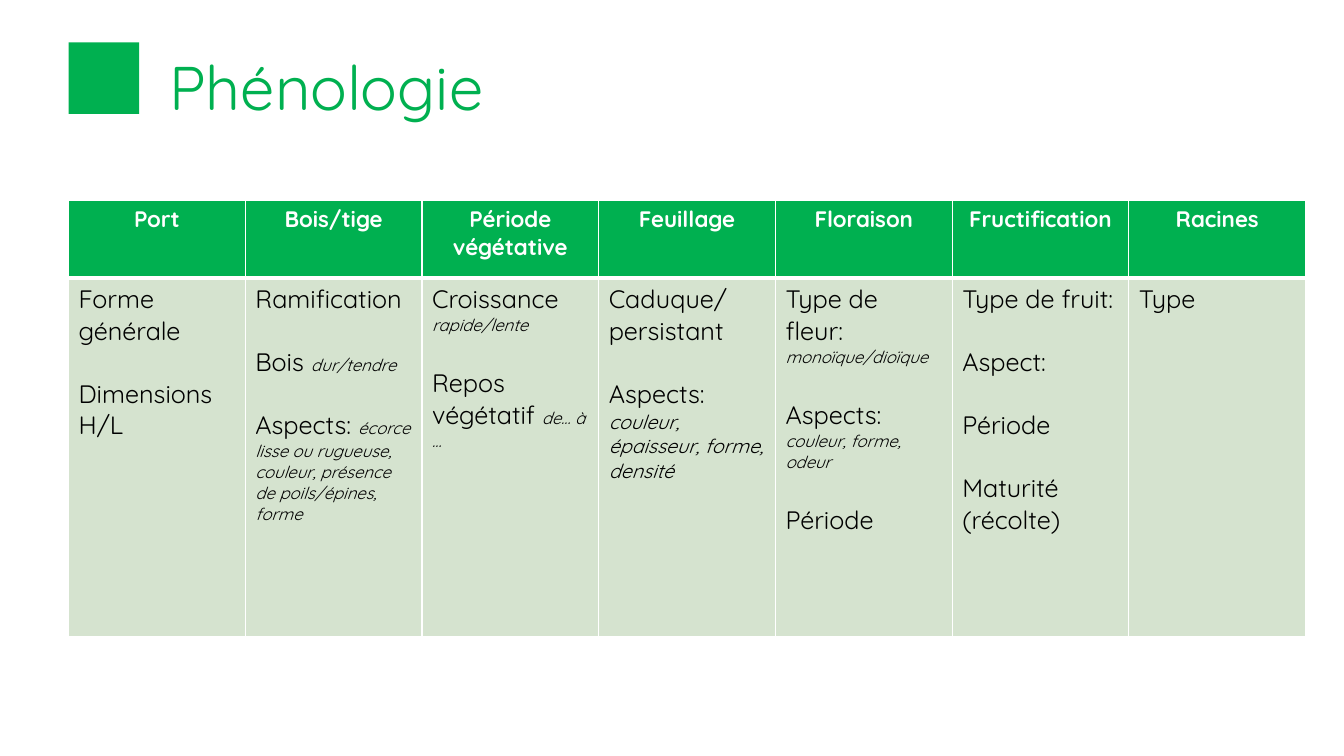
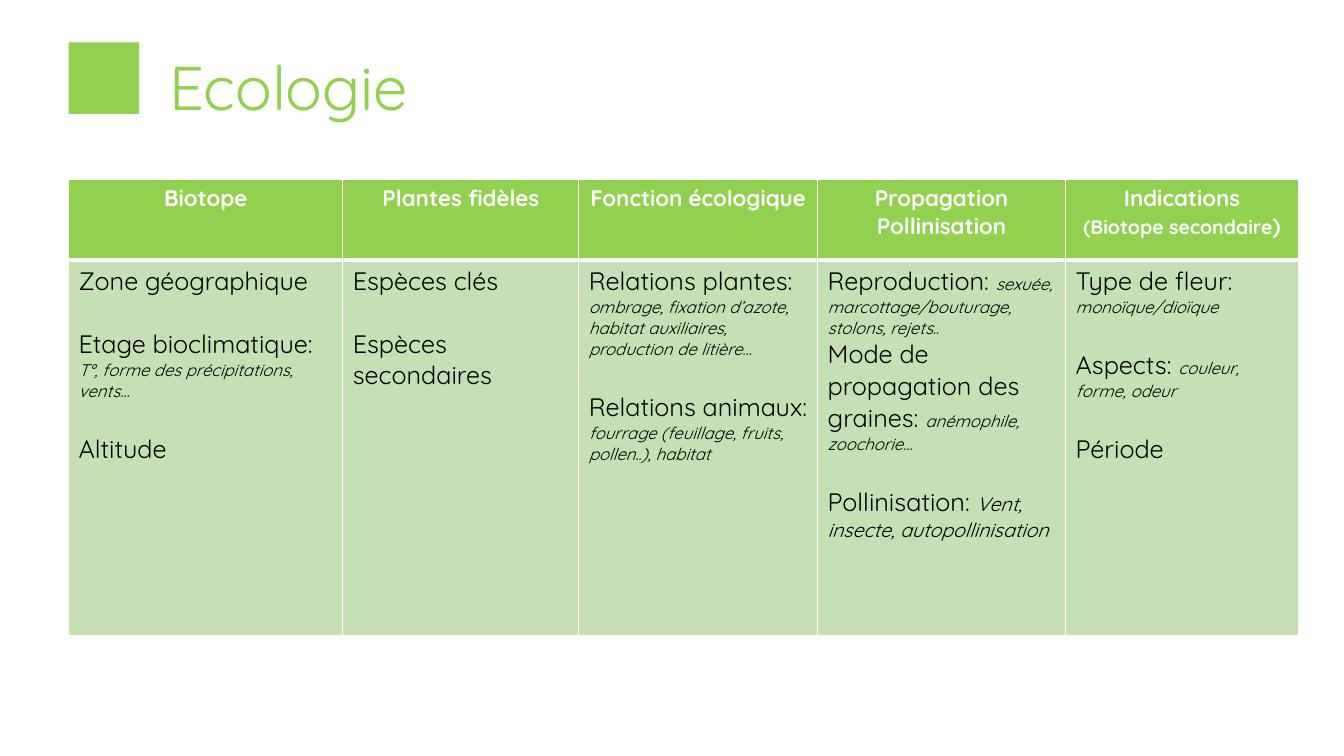
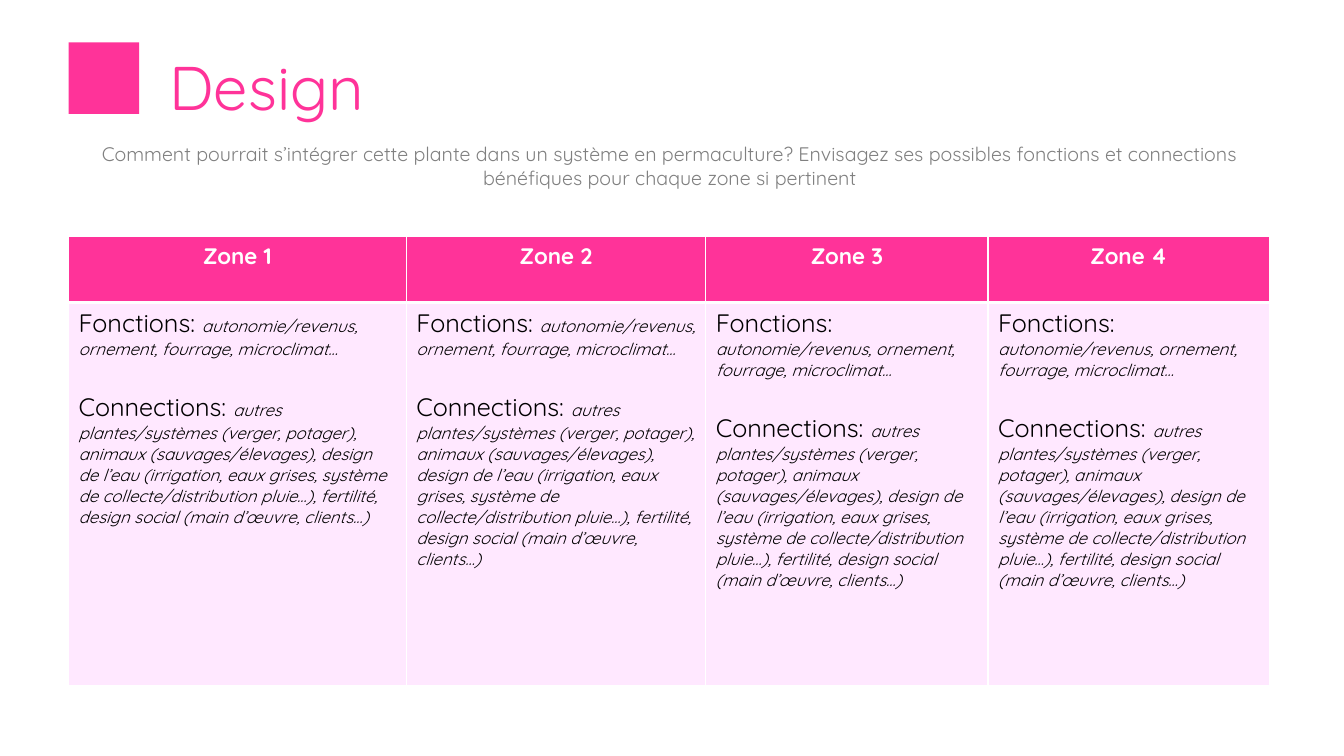
from lxml import etree
from pptx import Presentation
from pptx import util as u
from pptx.dml.color import RGBColor
from pptx.enum import lang, shapes, text
from pptx.oxml import ns

# Shared look
FONT = "Quicksand"
WHITE = RGBColor(0xFF, 0xFF, 0xFF)
BLACK = RGBColor(0x00, 0x00, 0x00)
GREY = RGBColor(0x80, 0x80, 0x80)
GREEN = RGBColor(0x00, 0xB0, 0x50)
SAGE = RGBColor(0xD5, 0xE3, 0xCF)
LIME = RGBColor(0x92, 0xD0, 0x50)
PALE_LIME = RGBColor(0xC5, 0xE0, 0xB4)
PINK = RGBColor(0xFF, 0x33, 0x99)
PALE_PINK = RGBColor(0xFF, 0xCC, 0xFF)

SLIDE_W, SLIDE_H = u.Inches(13.33), u.Inches(7.5)
LEFT = 0.68
THIN, THICK = u.Pt(1), u.Pt(3)
TOPIC_GAP = u.Pt(22.5)  # one line of 18 pt text

TITLE = {"size": u.Pt(44), "bold": False}
HEADING = {"size": u.Pt(16), "bold": True, "color": WHITE}
TOPIC = {"size": u.Pt(18), "bold": False, "color": BLACK}
QUESTION = {"size": u.Pt(14), "bold": False, "color": GREY}
HINT = {"size": u.Pt(12), "italic": True}
BIG_HINT = {"size": u.Pt(14), "italic": True}


# Text: a paragraph is a list of (words, format changes)
def topic(label, hint="", style=HINT):
    return [(label, {})] + ([(hint, style)] if hint else [])


def add_run(paragraph, words, style):
    run = paragraph.add_run()
    run.text = words
    values = {"name": FONT, "language_id": lang.MSO_LANGUAGE_ID.FRENCH, **style}
    run.font.color.rgb = values.pop("color")
    for key, value in values.items():
        setattr(run.font, key, value)


def write(frame, paragraphs, style, **layout):
    frame.word_wrap = True
    for index, runs in enumerate(paragraphs):
        paragraph = frame.paragraphs[0] if index == 0 else frame.add_paragraph()
        for key, value in layout.items():
            setattr(paragraph, key, value)
        for words, changes in runs:
            add_run(paragraph, words, {**style, **changes})


def add_text(slide, box, words, style, **layout):
    frame = slide.shapes.add_textbox(*map(u.Inches, box)).text_frame
    frame.vertical_anchor = text.MSO_ANCHOR.MIDDLE
    write(frame, [[(words, {})]], style, **layout)


# Title with its coloured square
def add_title(slide, words, color):
    add_text(slide, (1.58, 0.4, 10.84, 0.99), words, {**TITLE, "color": color},
             line_spacing=0.9)
    square = slide.shapes.add_shape(shapes.MSO_SHAPE.RECTANGLE,
                                    *map(u.Inches, (LEFT, 0.42, 0.7, 0.71)))
    square.shadow.inherit = False
    square.fill.solid()
    square.fill.fore_color.rgb = color
    square.line.fill.background()


# Table cells
def add_borders(cell, top, bottom):
    properties = cell._tc.get_or_add_tcPr()
    for side, width in (("L", THIN), ("R", THIN), ("T", top), ("B", bottom)):
        line = etree.SubElement(properties, ns.qn(f"a:ln{side}"), w=str(width))
        fill = etree.SubElement(line, ns.qn("a:solidFill"))
        etree.SubElement(fill, ns.qn("a:srgbClr"), val=str(WHITE))


def paint(cell, color, opacity=100):
    cell.fill.solid()
    cell.fill.fore_color.rgb = color
    if opacity < 100:
        tint = cell._tc.tcPr.find(".//" + ns.qn("a:solidFill") + "/" + ns.qn("a:srgbClr"))
        for tint in cell._tc.tcPr.findall(ns.qn("a:solidFill") + "/" + ns.qn("a:srgbClr")):
            etree.SubElement(tint, ns.qn("a:alpha"), val=str(opacity * 1000))


def add_sheet(slide, top, widths, heights, color, body, columns, opacity=100):
    """columns: (heading paragraphs, groups of topics) for each column."""
    frame = slide.shapes.add_table(2, len(widths), *map(
        u.Inches, (LEFT, top, sum(widths), sum(heights))))
    table = frame.table
    for row, height in zip(table.rows, heights):
        row.height = u.Inches(height)
    for index, (width, (heading, topics)) in enumerate(zip(widths, columns)):
        table.columns[index].width = u.Inches(width)
        head, detail = table.cell(0, index), table.cell(1, index)
        add_borders(head, THIN, THICK)
        paint(head, color)
        write(head.text_frame, heading, HEADING, alignment=text.PP_ALIGN.CENTER)
        add_borders(detail, THICK, THIN)
        paint(detail, body, opacity)
        write(detail.text_frame, topics, TOPIC, alignment=text.PP_ALIGN.LEFT)
        for paragraph in detail.text_frame.paragraphs[1:]:
            if not paragraph.text.startswith(UNSPACED):
                paragraph.space_before = TOPIC_GAP


# Content
UNSPACED = "Mode de propagation"  # follows the topic above without a gap

FLOWER = [topic("Type de fleur: ", "monoïque/dioïque"),
          topic("Aspects: ", "couleur, forme, odeur"),
          topic("Période")]

PHENOLOGY = [
    ([topic("Port")], [topic("Forme générale"), topic("Dimensions H/L")]),
    ([topic("Bois/tige")], [
        topic("Ramification"),
        topic("Bois ", "dur/tendre"),
        topic("Aspects: ", "écorce lisse ou rugueuse, couleur, présence de "
                           "poils/épines, forme")]),
    ([topic("Période végétative")], [
        topic("Croissance ", "rapide/lente"),
        topic("Repos végétatif ", "de… à …")]),
    ([topic("Feuillage")], [
        topic("Caduque/persistant"),
        topic("Aspects: ", "couleur, épaisseur, forme, densité", BIG_HINT)]),
    ([topic("Floraison")], FLOWER),
    ([topic("Fructification")], [
        topic("Type de fruit:"), topic("Aspect:"), topic("Période"),
        topic("Maturité (récolte)")]),
    ([topic("Racines")], [topic("Type")]),
]

ECOLOGY = [
    ([topic("Biotope")], [
        topic("Zone géographique"),
        topic("Etage bioclimatique: ", "T°, forme des précipitations, vents…"),
        topic("Altitude")]),
    ([topic("Plantes fidèles")], [topic("Espèces clés"), topic("Espèces secondaires")]),
    ([topic("Fonction écologique")], [
        topic("Relations plantes: ", "ombrage, fixation d’azote, habitat "
                                     "auxiliaires, production de litière…"),
        topic("Relations animaux: ", "fourrage (feuillage, fruits, pollen..), habitat")]),
    ([topic("Propagation"), topic("Pollinisation")], [
        topic("Reproduction: ", "sexuée, marcottage/bouturage, stolons, rejets.."),
        topic("Mode de propagation des graines: ", "anémophile, zoochorie…"),
        topic("Pollinisation: ", "Vent, insecte, autopollinisation", BIG_HINT)]),
    ([topic("Indications"),
      [("(Biotope secondaire", {"size": u.Pt(14)}), (")", {})]], FLOWER),
]

ZONE_TOPICS = [
    topic("Fonctions: ", "autonomie/revenus, ornement, fourrage, microclimat…"),
    topic("Connections: ", "autres plantes/systèmes (verger, potager), animaux "
          "(sauvages/élevages), design de l’eau (irrigation, eaux grises, système de "
          "collecte/distribution pluie…), fertilité, design social (main d’œuvre, "
          "clients…)"),
]
ZONES = [([topic(f"Zone {number}")], ZONE_TOPICS) for number in range(1, 5)]

INTRO = ("Comment pourrait s’intégrer cette plante dans un système en permaculture? "
         "Envisagez ses possibles fonctions et connections bénéfiques pour chaque "
         "zone si pertinent")


def main():
    deck = Presentation()
    deck.slide_width, deck.slide_height = SLIDE_W, SLIDE_H
    blank = deck.slide_layouts[6]

    # Phenology
    phenology = deck.slides.add_slide(blank)
    add_title(phenology, "Phénologie", GREEN)
    add_sheet(phenology, 1.99, [12.27 / 7] * 7, (0.77, 3.56), GREEN, SAGE, PHENOLOGY)

    # Ecology
    ecology = deck.slides.add_slide(blank)
    add_title(ecology, "Ecologie", LIME)
    add_sheet(ecology, 1.78, (2.72, 2.34, 2.37, 2.46, 2.31), (0.8, 3.73),
              LIME, PALE_LIME, ECOLOGY)

    # Design by zone
    design = deck.slides.add_slide(blank)
    add_title(design, "Design", PINK)
    add_sheet(design, 2.35, (3.35, 2.97, 2.8, 2.79), (0.65, 3.8),
              PINK, PALE_PINK, ZONES, opacity=44)
    add_text(design, (LEFT, 1.29, 11.93, 0.71), INTRO, QUESTION,
             alignment=text.PP_ALIGN.CENTER)

    deck.save("out.pptx")


if __name__ == "__main__":
    main()
